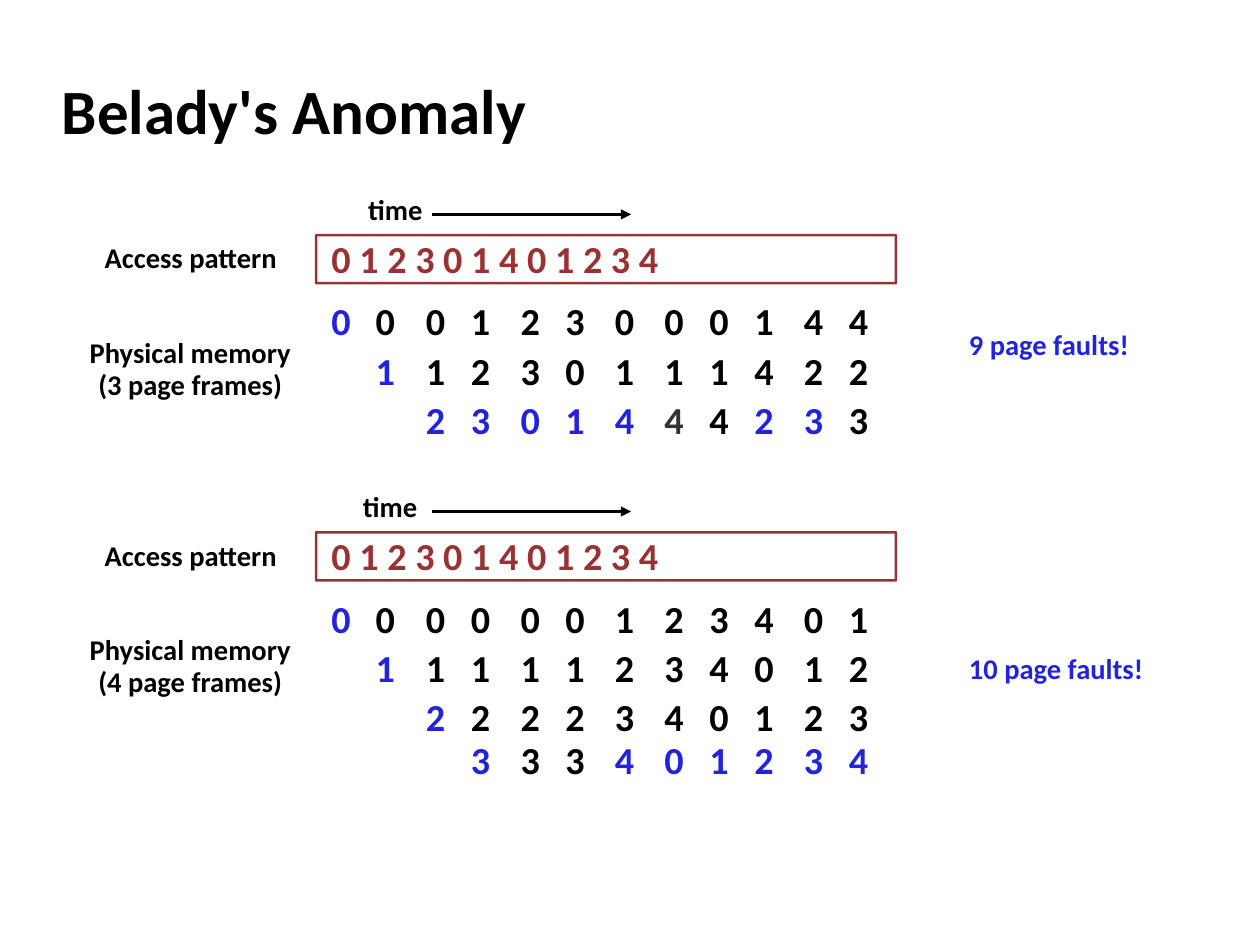
from lxml import etree
from pptx import Presentation
from pptx.dml.color import RGBColor
from pptx.enum import shapes, text
from pptx.oxml.ns import qn
from pptx.util import Pt

FONT = "Calibri"
BLACK = RGBColor(0x00, 0x00, 0x00)
GREY = RGBColor(0x33, 0x33, 0x33)
BLUE = RGBColor(0x23, 0x23, 0xDC)
RED = RGBColor(0x99, 0x33, 0x33)

TITLE = "Belady's Anomaly"
ACCESS_PATTERN = "0 1 2 3 0 1 4 0 1 2 3 4"

# Each memory row pairs its digits with marks: F page fault, g grey, . plain.
PANELS = [
    {
        "top": 111.5, "time_left": 210.4,
        "frames": "(3 page frames)",
        "faults": "9 page faults!", "faults_top": 188.6,
        "memory": [("000123000144", "F..........."),
                   (" 11230111422", ".F.........."),
                   ("  2301444233", "..FFFFFg.FF.")],
    },
    {
        "top": 281.3, "time_left": 207.4,
        "frames": "(4 page frames)",
        "faults": "10 page faults!", "faults_top": 373.7,
        "memory": [("000000123401", "F..........."),
                   (" 1111234012", ".F.........."),
                   ("  222340123", "..F........."),
                   ("   333401234", "...F..FFFFFF")],
    },
]
# Rows are listed by access step, so the later rows start further right.
PANELS[0]["memory"][2] = ("  2301444233", "..FFFFFg.FF.")
PANELS[1]["memory"][1] = (" 11111234012", ".F..........")
PANELS[1]["memory"][2] = ("  2222340123", "..F.........")

MARK_COLORS = {"F": BLUE, "g": GREY, ".": BLACK}
COLUMN_LEFTS = [189.4, 214.7, 243.3, 269, 297.5, 323,
                351.4, 379.6, 405.3, 431, 459.4, 485]
ROW_PITCH = 28.1
SEPARATE_ROWS = 3  # any further row continues in the box of the last one
LINE_WIDTH = 1.45
DIGIT_SIZE, LABEL_SIZE = 21.8, 16.3


def add_text(slide, left, top, width, height, lines, size, align=None):
    """Add a text box without insets; lines are (text, color) pairs."""
    box = slide.shapes.add_textbox(Pt(left), Pt(top), Pt(width), Pt(height))
    frame = box.text_frame
    frame.word_wrap = True
    frame.margin_left = frame.margin_right = 0
    frame.margin_top = frame.margin_bottom = 0
    for index, (content, color) in enumerate(lines):
        paragraph = frame.add_paragraph() if index else frame.paragraphs[0]
        paragraph.text = content
        paragraph.alignment = align
        paragraph.line_spacing = 0.95 if size == DIGIT_SIZE else 0.94
        paragraph.font.name = FONT
        paragraph.font.size = Pt(size)
        paragraph.font.bold = True
        paragraph.font.color.rgb = color


def add_time_arrow(slide, top):
    arrow = slide.shapes.add_connector(
        shapes.MSO_CONNECTOR.STRAIGHT, Pt(247), Pt(top), Pt(360.7), Pt(top))
    arrow.line.color.rgb = BLACK
    arrow.line.width = Pt(LINE_WIDTH)
    etree.SubElement(arrow.line._get_or_add_ln(), qn("a:tailEnd"), type="triangle")
    etree.SubElement(arrow._element.spPr, qn("a:effectLst"))


def add_access_frame(slide, top):
    frame = slide.shapes.add_shape(
        shapes.MSO_SHAPE.ROUNDED_RECTANGLE, Pt(180.7), Pt(top), Pt(331.2), Pt(27.4))
    frame.adjustments[0] = 0.004
    frame.shadow.inherit = False
    frame.fill.background()
    frame.line.color.rgb = RED
    frame.line.width = Pt(LINE_WIDTH)


def add_memory(slide, top, memory):
    for column, left in enumerate(COLUMN_LEFTS):
        cells = [(digits[column], MARK_COLORS[marks[column]])
                 for digits, marks in memory]
        last = SEPARATE_ROWS - 1
        groups = [[cell] for cell in cells[:last]] + [cells[last:]]
        for row, group in enumerate(groups):
            # The fourth frame can only be filled after the third one.
            lines = [cell for cell in group if cell[0] != " "]
            if lines:
                add_text(slide, left, top + row * ROW_PITCH, 13.7,
                         25.2 * len(lines), lines, DIGIT_SIZE)


def add_panel(slide, panel):
    top = panel["top"]
    add_text(slide, panel["time_left"], top, 34, 18.7, [("time", BLACK)], LABEL_SIZE)
    add_time_arrow(slide, top + 11)
    add_access_frame(slide, top + 22.9)
    add_text(slide, 189.4, top + 24.7, 310.3, 25.2,
             [(ACCESS_PATTERN, RED)], DIGIT_SIZE)
    add_text(slide, 59.8, top + 27.5, 109.4, 18.7,
             [("Access pattern", BLACK)], LABEL_SIZE)
    add_text(slide, 45.4, top + 81.5, 126.7, 38.2,
             [("Physical memory", BLACK), (panel["frames"], BLACK)],
             LABEL_SIZE, text.PP_ALIGN.CENTER)
    add_memory(slide, top + 60.6, panel["memory"])
    add_text(slide, 553.7, panel["faults_top"], 110, 18.7,
             [(panel["faults"], BLUE)], LABEL_SIZE)


def add_title(slide):
    title = slide.shapes.title
    title.left, title.top, title.width, title.height = (
        Pt(28.1), Pt(34.6), Pt(597.6), Pt(59.8))
    title.text_frame.text = TITLE
    title.text_frame.vertical_anchor = text.MSO_ANCHOR.MIDDLE
    paragraph = title.text_frame.paragraphs[0]
    paragraph.alignment = text.PP_ALIGN.LEFT
    paragraph.line_spacing = 0.94
    paragraph.font.name = FONT
    paragraph.font.size = Pt(36)
    paragraph.font.bold = True
    paragraph.font.color.rgb = BLACK


def main():
    presentation = Presentation()
    presentation.slide_width, presentation.slide_height = Pt(720), Pt(540)
    slide = presentation.slides.add_slide(presentation.slide_layouts[5])
    add_title(slide)
    for panel in PANELS:
        add_panel(slide, panel)
    presentation.save("out.pptx")


if __name__ == "__main__":
    main()
